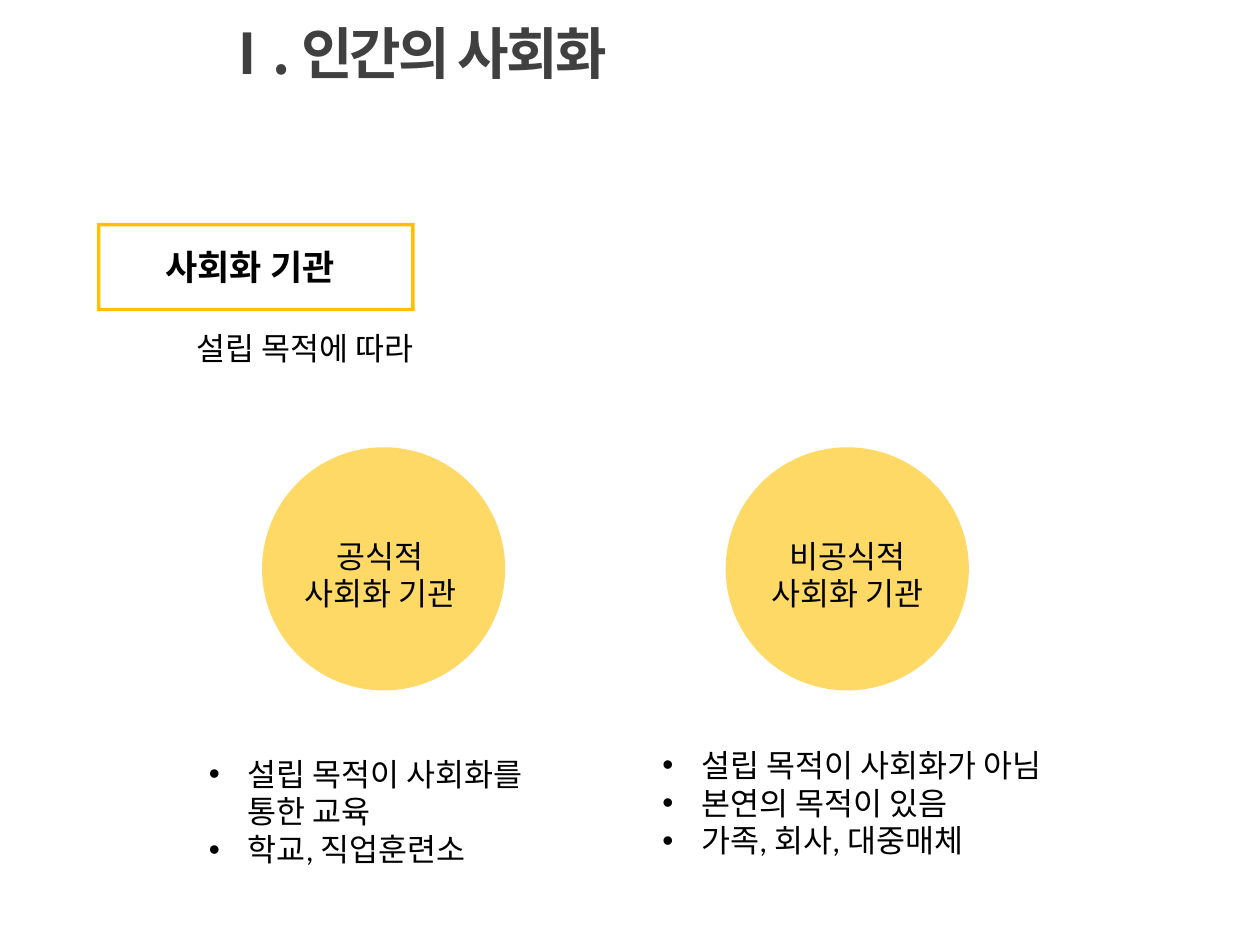
import pptx
import pptx.util
import pptx.dml.color
import pptx.enum.shapes
import pptx.enum.text
import pptx.oxml.ns
import lxml.etree

Inches = pptx.util.Inches
Pt = pptx.util.Pt
MSO_SHAPE = pptx.enum.shapes.MSO_SHAPE
PP_ALIGN = pptx.enum.text.PP_ALIGN
MSO_ANCHOR = pptx.enum.text.MSO_ANCHOR
MSO_AUTO_SIZE = pptx.enum.text.MSO_AUTO_SIZE
qn = pptx.oxml.ns.qn
KOREAN = "Noto Sans CJK KR"


def paint(color_format, hex_color):
    color_format.rgb = pptx.dml.color.RGBColor.from_string(hex_color)


def write(frame, lines, size, font=KOREAN, color="000000", bold=False,
          align=PP_ALIGN.LEFT, bullet=False):
    frame.word_wrap = True
    for i, line in enumerate(lines):
        paragraph = frame.paragraphs[0] if i == 0 else frame.add_paragraph()
        paragraph.alignment = align
        if bullet:
            props = paragraph._p.get_or_add_pPr()
            props.set("marL", str(Inches(0.31)))
            props.set("indent", str(-Inches(0.31)))
            lxml.etree.SubElement(props, qn("a:buFont")).set("typeface", "Arial")
            lxml.etree.SubElement(props, qn("a:buChar")).set("char", "•")
        run = paragraph.add_run()
        run.text = line
        run.font.size = Pt(size)
        run.font.bold = bold
        paint(run.font.color, color)
        run.font.name = font
        east_asian = lxml.etree.SubElement(run._r.get_or_add_rPr(), qn("a:ea"))
        east_asian.set("typeface", KOREAN)


deck = pptx.Presentation()
deck.slide_width = Inches(10)
deck.slide_height = Inches(7.5)
slide = deck.slides.add_slide(deck.slide_layouts[5])
shapes = slide.shapes

title = shapes.title
title.left, title.top = Inches(1.64), Inches(-0.01)
title.width, title.height = Inches(8.02), Inches(0.85)
title.text_frame.auto_size = MSO_AUTO_SIZE.NONE
title.text_frame.vertical_anchor = MSO_ANCHOR.MIDDLE
write(title.text_frame, ["Ⅰ. 인간의 사회화"], 32, color="404040", bold=True)
title.text_frame.paragraphs[0].runs[0]._r.get_or_add_rPr().set("spc", "-150")

heading = shapes.add_textbox(Inches(0.77), Inches(1.9), Inches(2.43), Inches(0.44))
write(heading.text_frame, ["사회화 기관"], 20, bold=True, align=PP_ALIGN.CENTER)

border = shapes.add_shape(MSO_SHAPE.FRAME, Inches(0.77), Inches(1.77), Inches(2.52), Inches(0.7))
border.adjustments[0] = 0.038
border.shadow.inherit = False
border.fill.solid()
paint(border.fill.fore_color, "FFC000")
border.line.fill.background()

criterion = shapes.add_textbox(Inches(1.46), Inches(2.56), Inches(4.06), Inches(0.4))
write(criterion.text_frame, ["설립 목적에 따라"], 18, font="Calibri")

institutions = [
    (2.08, ["공식적 ", "사회화 기관 "], (1.56, 5.94, 2.94),
     ["설립 목적이 사회화를 통한 교육", "학교, 직업훈련소"]),
    (5.76, ["비공식적", "사회화 기관"], (5.16, 5.87, 3.76),
     ["설립 목적이 사회화가 아님", "본연의 목적이 있음", "가족, 회사, 대중매체"]),
]
for circle_left, name, (left, top, width), features in institutions:
    circle = shapes.add_shape(MSO_SHAPE.OVAL, Inches(circle_left), Inches(3.55),
                              Inches(1.93), Inches(1.93))
    label = shapes.add_shape(MSO_SHAPE.RECTANGLE, Inches(circle_left + 0.13), Inches(4.21),
                             Inches(1.67), Inches(0.71))
    for part in (circle, label):
        part.shadow.inherit = False
        part.fill.solid()
        paint(part.fill.fore_color, "FFD966")
        part.line.fill.background()
    label.text_frame.vertical_anchor = MSO_ANCHOR.TOP
    write(label.text_frame, name, 18, align=PP_ALIGN.CENTER)

    description = shapes.add_textbox(Inches(left), Inches(top), Inches(width), Inches(1.01))
    write(description.text_frame, features, 18, font="Calibri", bullet=True)

deck.save("out.pptx")
